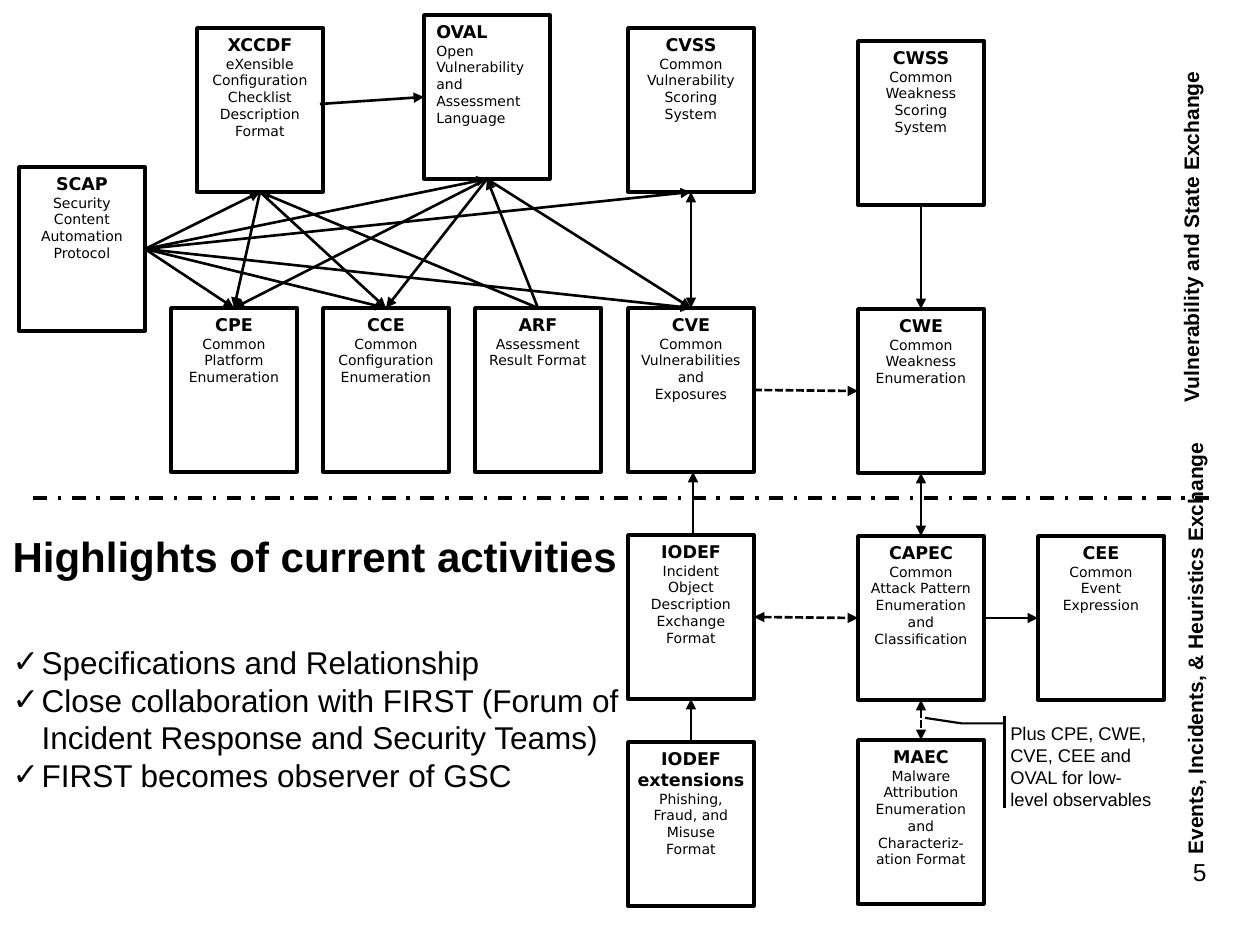
import pptx
import pptx.dml.color
import pptx.enum.dml
import pptx.enum.shapes
import pptx.enum.text
import pptx.oxml
import pptx.oxml.ns
import pptx.util

SCALE = 914400 / 126
BLACK = "000000"
WHITE = "FFFFFF"
CARD_WIDTH, CARD_HEIGHT = 126, 164
TOP, LEFT, BOTTOM, RIGHT = range(4)
ALIGN = pptx.enum.text.PP_ALIGN
ANCHOR = pptx.enum.text.MSO_ANCHOR
AUTO = pptx.enum.text.MSO_AUTO_SIZE
DASH = pptx.enum.dml.MSO_LINE
SHAPE = pptx.enum.shapes.MSO_SHAPE

CARDS = {
    "OVAL": (424, 15, "Open Vulnerability and Assessment Language"),
    "XCCDF": (197, 28, "eXensible Configuration Checklist Description Format"),
    "CVSS": (628, 28, "Common Vulnerability Scoring System"),
    "CWSS": (858, 41, "Common Weakness Scoring System"),
    "SCAP": (19, 167, "Security Content Automation Protocol"),
    "CPE": (171, 308, "Common Platform Enumeration"),
    "CCE": (323, 308, "Common Configuration Enumeration"),
    "ARF": (475, 308, "Assessment Result Format"),
    "CVE": (628, 308, "Common Vulnerabilities and Exposures"),
    "CWE": (858, 309, "Common Weakness Enumeration"),
    "IODEF": (628, 535, "Incident Object Description Exchange Format"),
    "CAPEC": (858, 536, "Common Attack Pattern Enumeration and Classification"),
    "CEE": (1038, 536, "Common Event Expression"),
    "IODEF\vextensions": (628, 742, "Phishing,\vFraud, and\vMisuse\vFormat"),
    "MAEC": (858, 740, "Malware Attribution Enumeration and Characteriz-ation Format"),
}

ONE_WAY = [("SCAP", RIGHT, name, side) for name, side in (
    ("XCCDF", BOTTOM), ("OVAL", BOTTOM), ("CVSS", BOTTOM),
    ("CPE", TOP), ("CCE", TOP), ("CVE", TOP))]
ONE_WAY += [("OVAL", BOTTOM, name, TOP) for name in ("CPE", "CCE", "CVE")]
ONE_WAY += [("XCCDF", BOTTOM, name, TOP) for name in ("CPE", "CCE")]
ONE_WAY += [("ARF", TOP, name, BOTTOM) for name in ("XCCDF", "OVAL")]
ONE_WAY += [
    ("CWSS", BOTTOM, "CWE", TOP),
    ("IODEF\vextensions", TOP, "IODEF", BOTTOM),
    ("CAPEC", RIGHT, "CEE", LEFT),
]
TWO_WAY = [("CVSS", BOTTOM, "CVE", TOP), ("CWE", BOTTOM, "CAPEC", TOP)]
DASHED_TWO_WAY = [("IODEF", RIGHT, "CAPEC", LEFT), ("CAPEC", BOTTOM, "MAEC", TOP)]
DASHED_ONE_WAY = [("CVE", RIGHT, "CWE", LEFT)]


def px(*lengths):
    return [round(length * SCALE) for length in lengths]


def color(value):
    return pptx.dml.color.RGBColor.from_string(value)


def style(para, size, bold=False, align=ALIGN.LEFT, font="Arial"):
    para.alignment = align
    for span in para.runs:
        span.font.name = font
        span.font.size = pptx.util.Pt(size)
        span.font.bold = bold
        span.font.color.rgb = color(BLACK)


def add_child(parent, tag, **attributes):
    child = pptx.oxml.parse_xml(f"<a:{tag} {pptx.oxml.ns.nsdecls('a')}/>")
    for name, value in attributes.items():
        child.set(name, value)
    parent.append(child)


def add_card(page, left, top, name, description):
    card = page.shapes.add_shape(SHAPE.RECTANGLE, *px(left, top, CARD_WIDTH, CARD_HEIGHT))
    card.shadow.inherit = False
    card.fill.solid()
    card.fill.fore_color.rgb = color(WHITE)
    card.line.color.rgb = color(BLACK)
    card.line.width = pptx.util.Pt(2)
    frame = card.text_frame
    frame.word_wrap = "\v" not in name
    frame.vertical_anchor = ANCHOR.TOP
    frame.text = f"{name}\n"
    heading, detail = frame.paragraphs
    detail.text = description
    align = ALIGN.LEFT if name == "OVAL" else ALIGN.CENTER
    style(heading, 10, True, align, "DejaVu Sans")
    style(detail, 8, False, align, "DejaVu Sans")
    return card


def add_line(page, start=(0, 0), end=(0, 0), source=None, target=None,
             head=False, tail=True, dash=None, width=1.5):
    line = page.shapes.add_connector(
        pptx.enum.shapes.MSO_CONNECTOR.STRAIGHT, *px(*start, *end))
    if source:
        line.begin_connect(*source)
    if target:
        line.end_connect(*target)
    line.line.color.rgb = color(BLACK)
    line.line.width = pptx.util.Pt(width)
    if dash:
        line.line.dash_style = dash
    properties = line.element.spPr
    outline = properties.find(pptx.oxml.ns.qn("a:ln"))
    for shown, tag in ((head, "headEnd"), (tail, "tailEnd")):
        if shown:
            add_child(outline, tag, type="triangle")
    add_child(properties, "effectLst")


def add_diagram(page, box):
    left, top, width, height = box
    cards = {name: add_card(page, left + x, top + y, name, description)
             for name, (x, y, description) in CARDS.items()}
    groups = ((ONE_WAY, False, None), (TWO_WAY, True, None),
              (DASHED_ONE_WAY, False, DASH.SQUARE_DOT),
              (DASHED_TWO_WAY, True, DASH.SQUARE_DOT))
    for links, head, dash in groups:
        for source, source_side, target, target_side in links:
            add_line(page, source=(cards[source], source_side),
                     target=(cards[target], target_side), head=head, dash=dash)
    add_line(page, start=(left + 320, top + 104), target=(cards["OVAL"], LEFT))
    add_line(page, start=(left + 693, top + 535), end=(left + 693, top + 472))
    add_line(page, start=(left + 33, top + 498), end=(left + width, top + 498),
             tail=False, dash=DASH.DASH_DOT, width=2)


def add_callout(page, box):
    callout = page.shapes.add_shape(SHAPE.LINE_CALLOUT_2_ACCENT_BAR, *px(*box))
    for index, value in enumerate((0.08, 0.04, 0.08, -0.22, 0.02, -0.44)):
        callout.adjustments[index] = value
    callout.shadow.inherit = False
    callout.fill.background()
    callout.line.color.rgb = color(BLACK)
    callout.line.width = pptx.util.Pt(1.25)
    frame = callout.text_frame
    frame.text = "Plus CPE, CWE, CVE, CEE and OVAL for low-level observables"
    frame.vertical_anchor = ANCHOR.TOP
    frame.margin_right = px(6)[0]
    style(frame.paragraphs[0], 10.5)


def add_side_label(page, box, text, align, wrap):
    label = page.shapes.add_textbox(*px(*box))
    label.fill.solid()
    label.fill.fore_color.rgb = color(WHITE)
    frame = label.text_frame
    frame.text = text
    frame.word_wrap = wrap
    frame.auto_size = AUTO.SHAPE_TO_FIT_TEXT
    label.element.txBody.bodyPr.set("vert", "vert270")
    style(frame.paragraphs[0], 12, True, align)


def add_highlights(page, box):
    left, top, width, height = box
    title, body = page.placeholders
    title.left, title.top, title.width, title.height = px(left, top, width, 68)
    title.text_frame.text = "Highlights of current activities"
    title.text_frame.vertical_anchor = ANCHOR.MIDDLE
    title.text_frame.auto_size = AUTO.NONE
    style(title.text_frame.paragraphs[0], 24, True)
    body.left, body.top, body.width, body.height = px(left, top + 115, width, height - 115)
    frame = body.text_frame
    frame.text = ("Specifications and Relationship\n"
                  "Close collaboration with FIRST (Forum of Incident Response and Security Teams)\n"
                  "FIRST becomes observer of GSC")
    frame.auto_size = AUTO.NONE
    hanging = px(29)[0]
    for para in frame.paragraphs:
        para.space_before = pptx.util.Pt(0)
        para.line_spacing = pptx.util.Pt(21.5)
        properties = para._p.get_or_add_pPr()
        properties.set("marL", str(hanging))
        properties.set("indent", str(-hanging))
        add_child(properties, "buFont", typeface="Arial")
        add_child(properties, "buChar", char="✓")
        style(para, 18)


def add_page_number(page, box):
    number = page.shapes.add_textbox(*px(*box))
    number.text_frame.text = "5"
    number.text_frame.word_wrap = True
    style(number.text_frame.paragraphs[0], 14, align=ALIGN.RIGHT)


def main():
    deck = pptx.Presentation()
    deck.slide_width, deck.slide_height = px(1260, 945)
    page = deck.slides.add_slide(deck.slide_layouts[1])
    add_diagram(page, (0, 0, 1217, 906))
    add_side_label(page, (1176, 503, 50, 364),
                   "Events, Incidents, & Heuristics Exchange", ALIGN.LEFT, False)
    add_side_label(page, (1172, 34, 50, 406),
                   "Vulnerability and State Exchange", ALIGN.CENTER, True)
    add_callout(page, (998, 716, 166, 92))
    add_page_number(page, (1166, 851, 53, 66))
    add_highlights(page, (0, 522, 694, 283))
    deck.save("out.pptx")


if __name__ == "__main__":
    main()
